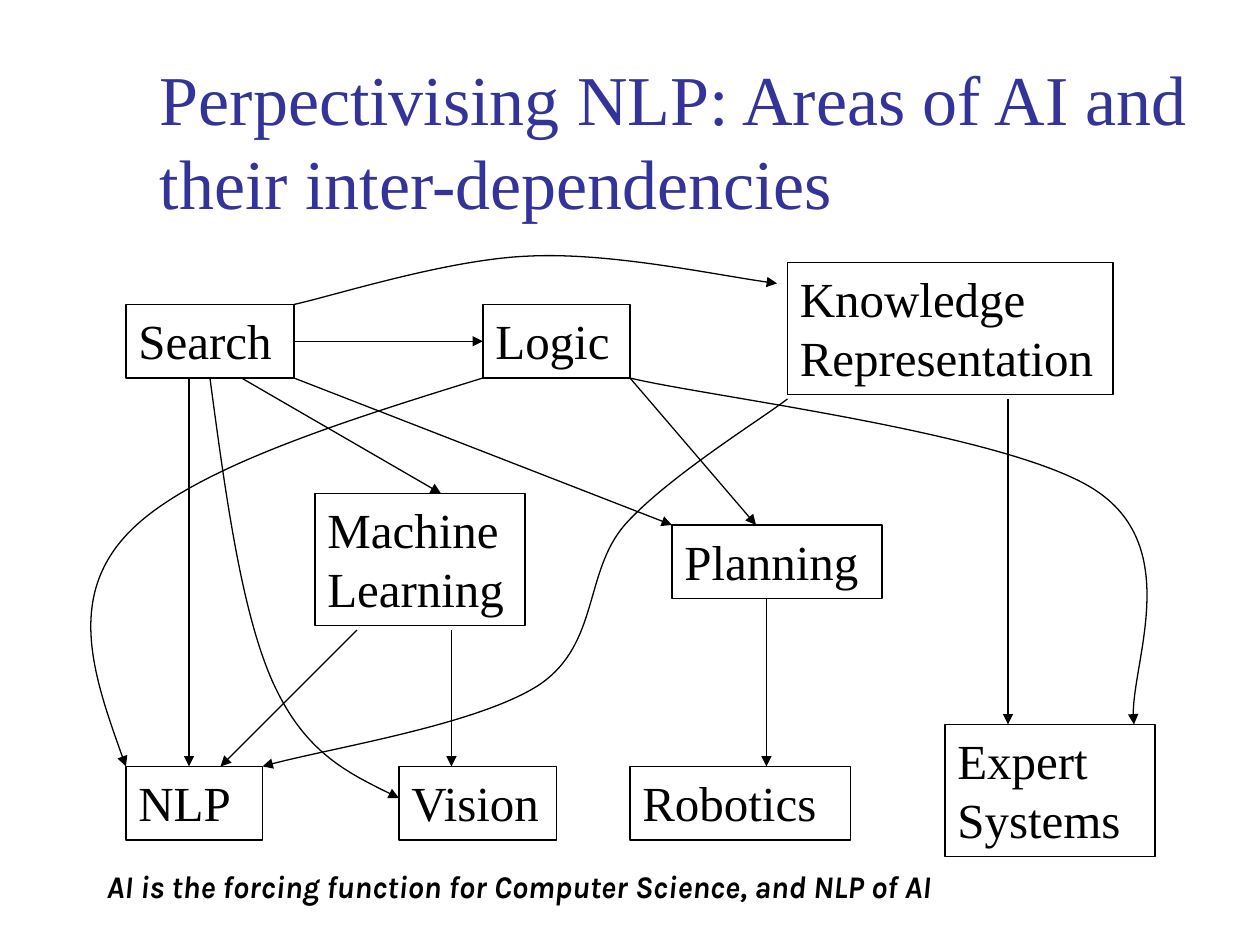
from lxml.etree import SubElement
from pptx import Presentation
from pptx.dml.color import RGBColor
from pptx.enum.shapes import MSO_CONNECTOR, MSO_SHAPE
from pptx.enum.text import MSO_ANCHOR, MSO_AUTO_SIZE, PP_ALIGN
from pptx.oxml.ns import qn
from pptx.util import Cm, Pt

BLACK = RGBColor(0x00, 0x00, 0x00)
INDIGO = RGBColor(0x33, 0x33, 0x99)
SERIF = "Times New Roman"
STEP = Cm(2.54) / 12
ONE_LINE, TWO_LINES = 7, 12.6

AREAS = {
    "Search": (0, 5, 16, ONE_LINE),
    "Vision": (26, 49, 15, ONE_LINE),
    "Planning": (52, 26, 20, ONE_LINE),
    "Machine Learning": (18, 23, 20, TWO_LINES),
    "Knowledge Representation": (63, 1, 31, TWO_LINES),
    "Logic": (34, 5, 14, ONE_LINE),
    "Expert Systems": (78, 45, 20, TWO_LINES),
    "Robotics": (48, 49, 21, ONE_LINE),
    "NLP": (0, 49, 13, ONE_LINE),
}
ARROWS = [
    ((6, 12), (6, 49)),
    ((16, 12), (52, 26)),
    ((11, 12), (30, 23)),
    ((48, 12), (60, 26)),
    ((84, 14), (84, 45)),
    ((31, 36), (31, 49)),
    ((61, 33), (61, 49)),
    ((22, 36), (9, 49)),
]
CURVES = [
    [(16, 5), (19.7, 4.2), (30.6, 0.7), (38.3, 0.4),
     (46, 0), (57.1, 2.4), (62, 3)],
    [(8, 12), (9.5, 23.2), (11, 34.3), (14, 41),
     (17, 47.6), (21.5, 49.8), (26, 52)],
    [(34, 12), (19.8, 16.4), (5.6, 20.9), (0, 27),
     (-5.6, 33.1), (-2.9, 41), (0, 49)],
    [(48, 12), (55.4, 13.8), (84.5, 17.3), (92.5, 22.8),
     (100.6, 28.3), (95.3, 40.3), (96, 45)],
    [(63, 14), (60.4, 16), (51.5, 21.5), (47.5, 26), (43.6, 30.5),
     (45.1, 37.3), (39.4, 41.2), (33.6, 45), (18.5, 47.4), (13, 49)],
]


def write_text(shape, text, *, size, font=SERIF, color=BLACK, bold=False,
               italic=False, anchor=MSO_ANCHOR.TOP, wrap=True,
               fit=MSO_AUTO_SIZE.SHAPE_TO_FIT_TEXT):
    """Fill a shape with one left-aligned, formatted paragraph."""
    frame = shape.text_frame
    frame.word_wrap = wrap
    frame.auto_size = fit
    frame.vertical_anchor = anchor
    para = frame.paragraphs[0]
    para.alignment = PP_ALIGN.LEFT
    span = para.add_run()
    span.text = text
    span.font.name = font
    span.font.size = Pt(size)
    span.font.color.rgb = color
    span.font.bold = bold
    span.font.italic = italic


def style_line(shape, arrowhead=True):
    """Give a shape a thin black line, with an arrowhead at its end."""
    shape.line.color.rgb = BLACK
    shape.line.width = Pt(0.75)
    if arrowhead:
        line = shape.line._get_or_add_ln()
        SubElement(line, qn("a:tailEnd"), type="triangle")


def add_title(page, left, top, width, height):
    """Place the slide title in the given box."""
    title = page.shapes.title
    title.left, title.top, title.width, title.height = left, top, width, height
    write_text(title, "Perpectivising NLP: Areas of AI and their inter-dependencies",
               size=40, color=INDIGO, anchor=MSO_ANCHOR.BOTTOM,
               fit=MSO_AUTO_SIZE.NONE)


def add_area(page, name, left, top, width, height):
    """Draw one framed area of AI."""
    box = page.shapes.add_shape(MSO_SHAPE.RECTANGLE, left, top, width, height)
    box.shadow.inherit = False
    box.fill.background()
    style_line(box, arrowhead=False)
    write_text(box, name, size=28)
    return box


def add_arrow(page, start=(0, 0), end=(0, 0)):
    """Draw a straight arrow between two points."""
    arrow = page.shapes.add_connector(MSO_CONNECTOR.STRAIGHT, *start, *end)
    style_line(arrow)
    SubElement(arrow._element.spPr, qn("a:effectLst"))
    return arrow


def add_curve(page, points):
    """Draw an arrow along cubic curves, given start, control and end points."""
    builder = page.shapes.build_freeform(*points[0])
    builder.add_line_segments(points[1:], close=False)
    curve = builder.convert_to_shape()
    outline = next(curve._element.iter(qn("a:path")))
    segments = outline.findall(qn("a:lnTo"))
    for first in range(0, len(segments), 3):
        cubic = SubElement(outline, qn("a:cubicBezTo"))
        for segment in segments[first:first + 3]:
            cubic.append(segment[0])
            outline.remove(segment)
    curve.shadow.inherit = False
    curve.fill.background()
    style_line(curve)


def add_diagram(page, left, top):
    """Place the areas and their dependencies from the given corner."""
    def place(point):
        return round(left + point[0] * STEP), round(top + point[1] * STEP)

    boxes = {}
    for name, (column, row, width, height) in AREAS.items():
        boxes[name] = add_area(page, name, *place((column, row)),
                               round(width * STEP), round(height * STEP))
    joined = add_arrow(page)
    joined.begin_connect(boxes["Search"], 3)
    joined.end_connect(boxes["Logic"], 1)
    for start, end in ARROWS:
        add_arrow(page, place(start), place(end))
    for points in CURVES:
        add_curve(page, [place(point) for point in points])


def add_footer(page, left, top, width, height):
    """Place the closing remark in the given box."""
    box = page.shapes.add_textbox(left, top, width, height)
    write_text(box, "AI is the forcing function for Computer Science, and NLP of AI",
               size=18, font="Karla", bold=True, italic=True, wrap=False)


def main():
    """Build the deck and save it."""
    deck = Presentation()
    deck.slide_width, deck.slide_height = Cm(25.4), Cm(19.05)
    page = deck.slides.add_slide(deck.slide_layouts[5])
    add_title(page, Cm(2.97), Cm(0.58), Cm(21.87), Cm(4.06))
    add_diagram(page, Cm(2.54), Cm(5.08))
    add_footer(page, Cm(1.9), Cm(17.35), Cm(20.45), Cm(1.02))
    deck.save("out.pptx")


if __name__ == "__main__":
    main()
